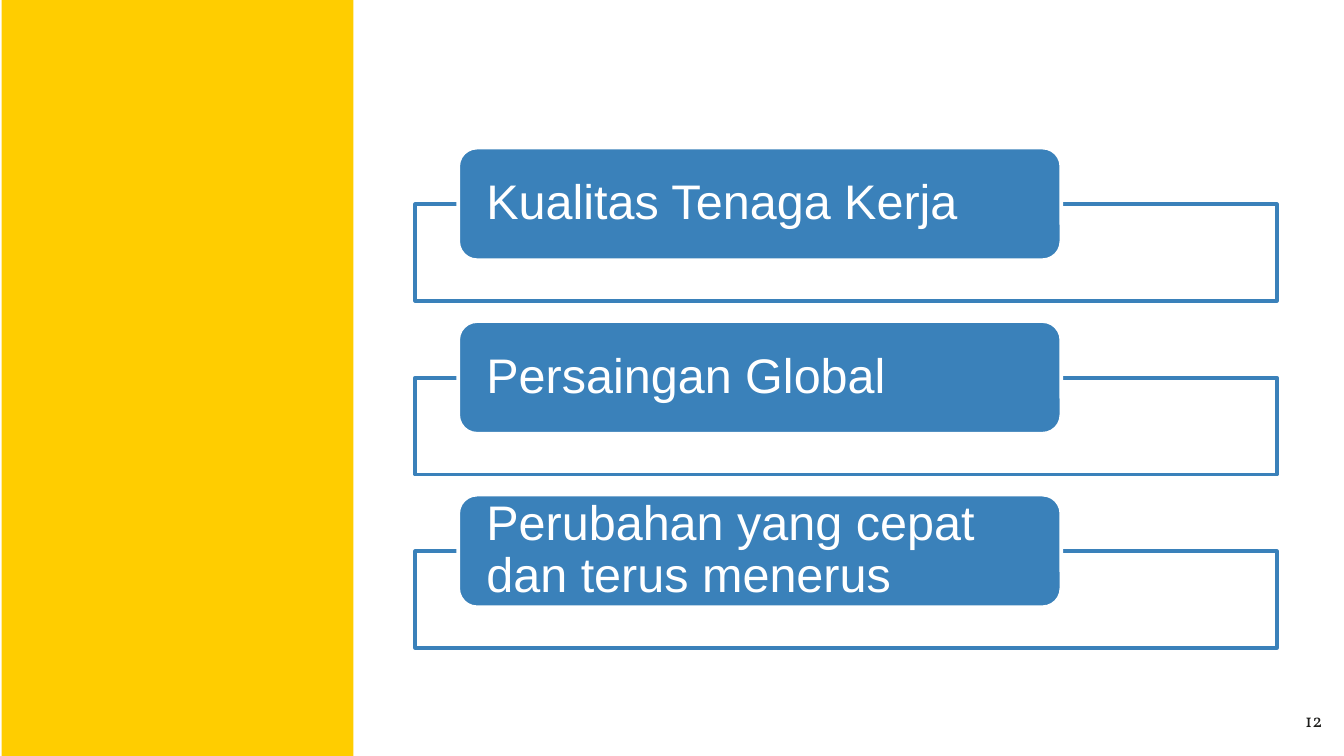
from pptx import Presentation
from pptx.dml.color import RGBColor
from pptx.enum.shapes import MSO_SHAPE
from pptx.enum.text import MSO_ANCHOR, PP_ALIGN
from pptx.util import Cm, Pt

# Content
CHALLENGES = [
    "Kualitas Tenaga Kerja",
    "Persaingan Global",
    "Perubahan yang cepat dan terus menerus",
]
SLIDE_NUMBER = "12"

YELLOW = RGBColor(0xFF, 0xCD, 0x00)
BLUE = RGBColor(0x3A, 0x81, 0xBA)
WHITE = RGBColor(0xFF, 0xFF, 0xFF)
BLACK = RGBColor(0x1D, 0x1D, 0x1B)

# Layout in centimetres
SLIDE_WIDTH, SLIDE_HEIGHT = 25.4, 14.29
FIRST_TOP, ROW_STEP = 2.79, 3.28
LABEL_LEFT, LABEL_WIDTH, LABEL_HEIGHT = 8.66, 11.4, 2.13
FRAME_LEFT, FRAME_WIDTH, FRAME_HEIGHT = 7.85, 16.28, 1.83
FRAME_DROP = 1.07


def add_box(slide, kind, left, top, width, height, fill, line=None):
    shape = slide.shapes.add_shape(kind, Cm(left), Cm(top), Cm(width), Cm(height))
    shape.shadow.inherit = False
    shape.fill.solid()
    shape.fill.fore_color.rgb = fill
    if line is None:
        shape.line.fill.background()
    else:
        shape.line.color.rgb = line
        shape.line.width = Pt(2)
    return shape


def write_text(shape, text, font_name, size, color, alignment):
    text_frame = shape.text_frame
    text_frame.word_wrap = True
    text_frame.text = text
    paragraph = text_frame.paragraphs[0]
    paragraph.alignment = alignment
    font = paragraph.runs[0].font
    font.name, font.size = font_name, Pt(size)
    font.color.rgb = color
    return paragraph


presentation = Presentation()
presentation.slide_width = Cm(SLIDE_WIDTH)
presentation.slide_height = Cm(SLIDE_HEIGHT)
slide = presentation.slides.add_slide(presentation.slide_layouts[6])

# Side panel
add_box(slide, MSO_SHAPE.RECTANGLE, 0.03, 0, 6.65, SLIDE_HEIGHT, YELLOW)

# Slide number
number_box = slide.shapes.add_textbox(Cm(23.72), Cm(13.18), Cm(1.52), Cm(1.09))
number_frame = number_box.text_frame
number_frame.margin_left = number_frame.margin_right = Cm(0.25)
number_frame.margin_top = number_frame.margin_bottom = Cm(0.25)
write_text(number_box, SLIDE_NUMBER, "Vollkorn", 10, BLACK, PP_ALIGN.RIGHT)

# Challenges: an outlined frame with a label over its top edge
for row, challenge in enumerate(CHALLENGES):
    top = FIRST_TOP + row * ROW_STEP
    add_box(slide, MSO_SHAPE.RECTANGLE, FRAME_LEFT, top + FRAME_DROP,
            FRAME_WIDTH, FRAME_HEIGHT, WHITE, BLUE)
    label = add_box(slide, MSO_SHAPE.ROUNDED_RECTANGLE, LABEL_LEFT, top,
                    LABEL_WIDTH, LABEL_HEIGHT, BLUE, WHITE)
    label_frame = label.text_frame
    label_frame.margin_left = label_frame.margin_right = Cm(0.43)
    label_frame.margin_top = label_frame.margin_bottom = 0
    label_frame.vertical_anchor = MSO_ANCHOR.MIDDLE
    paragraph = write_text(label, challenge, "Arial", 26, WHITE, PP_ALIGN.LEFT)
    paragraph.line_spacing = 0.9

presentation.save("out.pptx")
